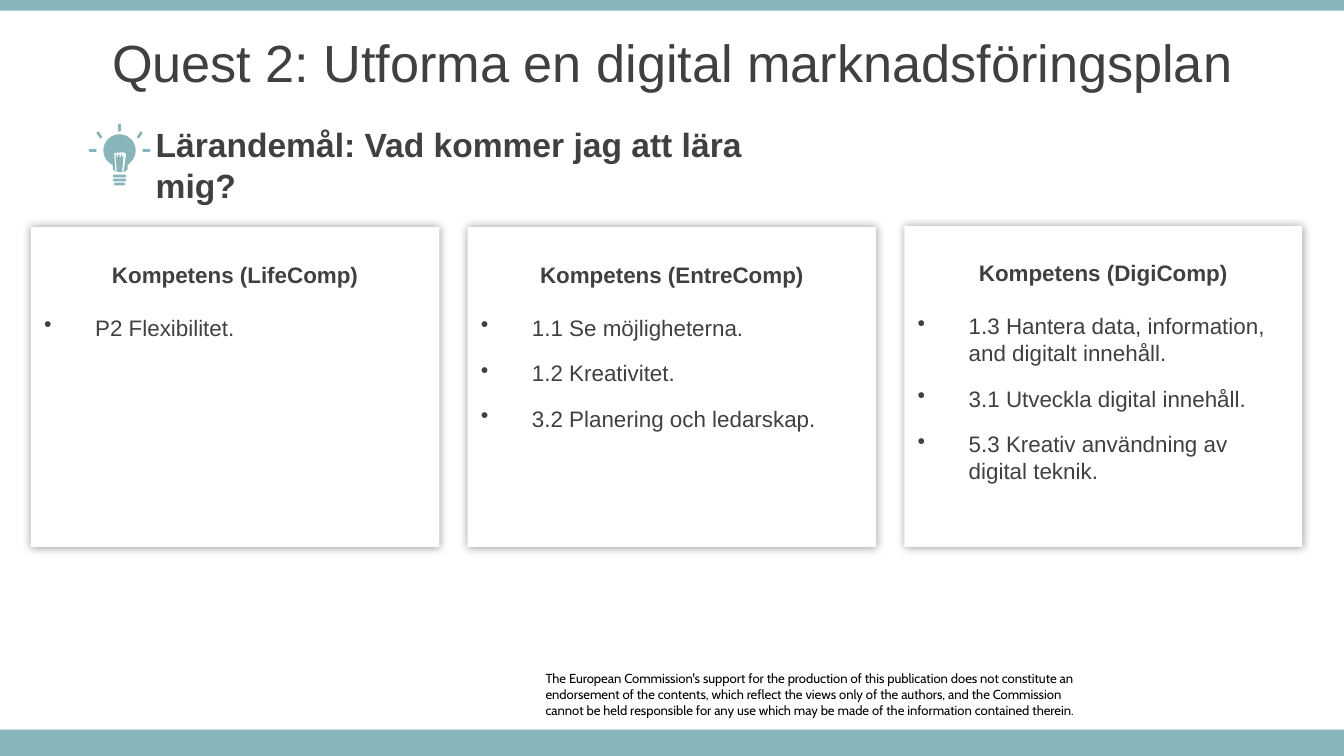
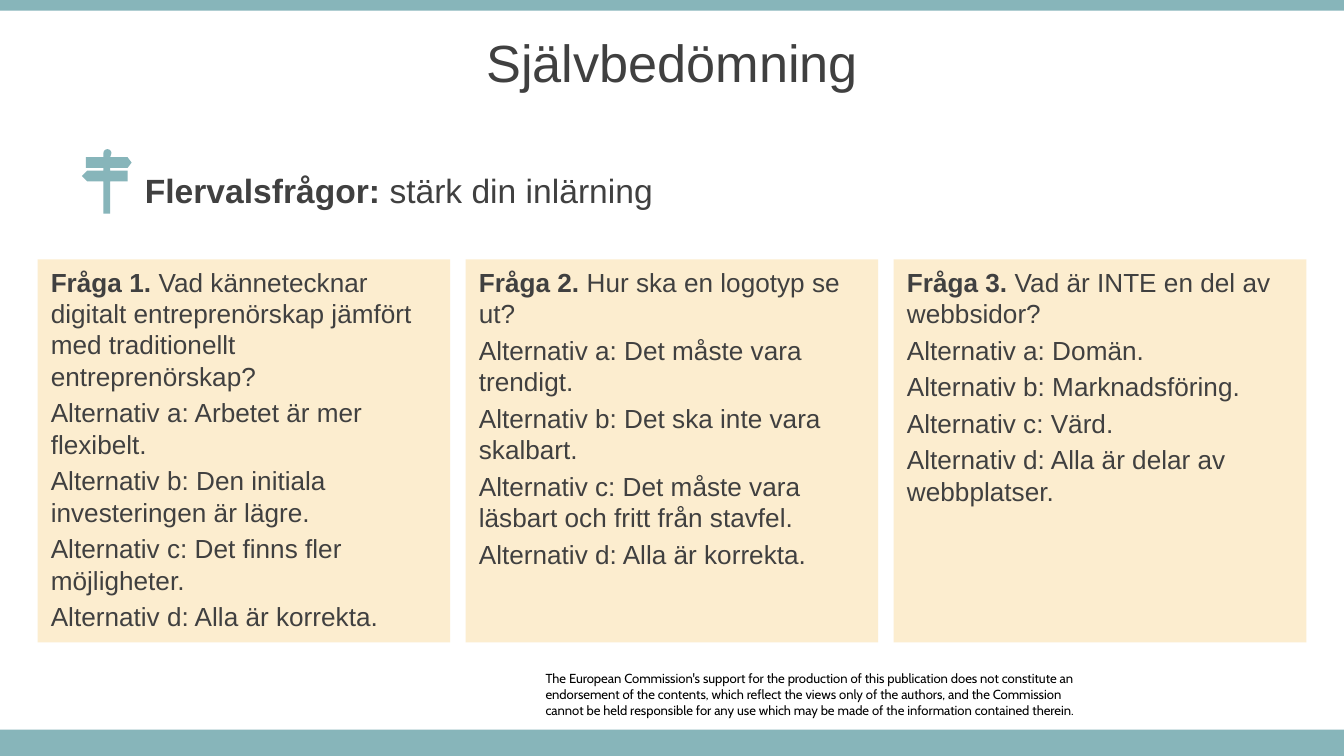
from dataclasses import dataclass
from math import atan2, cos, pi, sin

from lxml.etree import SubElement
from pptx import Presentation
from pptx.dml.color import RGBColor
from pptx.enum.shapes import MSO_SHAPE
from pptx.enum.text import MSO_ANCHOR, MSO_AUTO_SIZE, PP_ALIGN
from pptx.oxml.ns import qn
from pptx.util import Inches, Pt

COLOURS = {
    "teal": "87B5BA",
    "cream": "FCEDCF",
    "white": "FFFFFF",
    "text": "404040",
    "black": "000000",
}
DISCLAIMER = (
    "The European Commission's support for the production of this publication does not "
    "constitute an endorsement of the contents, which reflect the views only of the authors, "
    "and the Commission",
    "cannot be held responsible for any use which may be made of the information contained "
    "therein.",
)
Point = tuple[float, float]


@dataclass(frozen=True)
class Area:
    left: float
    top: float
    width: float
    height: float

    def lengths(self) -> list:
        return [Inches(side) for side in (self.left, self.top, self.width, self.height)]


@dataclass(frozen=True)
class Competence:
    area: Area
    heading: str
    goals: tuple[str, ...]


@dataclass(frozen=True)
class Question:
    label: str
    wording: str
    answers: tuple[str, ...]


COMPETENCES = (
    Competence(Area(0.23, 1.69, 3.04, 2.38), "Kompetens (LifeComp)", ("P2 Flexibilitet.",)),
    Competence(
        Area(3.48, 1.69, 3.04, 2.38),
        "Kompetens (EntreComp)",
        ("1.1 Se möjligheterna.", "1.2 Kreativitet.", "3.2 Planering och ledarskap."),
    ),
    Competence(
        Area(6.73, 1.68, 2.96, 2.39),
        "Kompetens (DigiComp)",
        (
            "1.3 Hantera data, information, and digitalt innehåll.",
            "3.1 Utveckla digital innehåll.",
            "5.3 Kreativ användning av digital teknik.",
        ),
    ),
)
QUESTIONS = (
    Question(
        "Fråga 1. ",
        "Vad kännetecknar digitalt entreprenörskap jämfört med traditionellt entreprenörskap?",
        (
            "Arbetet är mer flexibelt.",
            "Den initiala investeringen är lägre.",
            "Det finns fler möjligheter.",
            "Alla är korrekta.",
        ),
    ),
    Question(
        "Fråga 2. ",
        "Hur ska en logotyp se ut?",
        (
            "Det måste vara trendigt.",
            "Det ska inte vara skalbart.",
            "Det måste vara läsbart och fritt från stavfel.",
            "Alla är korrekta.",
        ),
    ),
    Question(
        "Fråga 3. ",
        "Vad är INTE en del av webbsidor?",
        ("Domän.", "Marknadsföring.", "Värd.", "Alla är delar av webbplatser."),
    ),
)


def paint(shape, colour: str) -> None:
    shape.shadow.inherit = False
    shape.fill.solid()
    shape.fill.fore_color.rgb = RGBColor.from_string(COLOURS[colour])
    shape.line.fill.background()


def add_rectangle(page, area: Area, colour: str):
    box = page.shapes.add_shape(MSO_SHAPE.RECTANGLE, *area.lengths())
    paint(box, colour)
    box.text_frame.word_wrap = True
    box.text_frame.vertical_anchor = MSO_ANCHOR.TOP
    return box


def add_text_box(page, area: Area, anchor=MSO_ANCHOR.MIDDLE):
    box = page.shapes.add_textbox(*area.lengths())
    box.text_frame.word_wrap = True
    box.text_frame.vertical_anchor = anchor
    return box


def write(box, text: str, *, size: float, bold_lead: str = "", bold: bool = False,
          font: str = "Arial", colour: str = "text", align=PP_ALIGN.LEFT,
          before: float = 0, after: float = 0, bullet: bool = False) -> None:
    """Add a paragraph, optionally opened by a bold lead; the first has no space before."""
    first = box.text_frame.paragraphs[0]
    fresh = not first.runs
    para = first if fresh else box.text_frame.add_paragraph()
    if bullet:
        properties = para._p.get_or_add_pPr()
        properties.set("marL", str(Inches(0.38)))
        properties.set("indent", str(-Inches(0.38)))
        SubElement(properties, qn("a:buChar")).set("char", "•")
    para.alignment = align
    para.space_before = Pt(0 if fresh else before)
    para.space_after = Pt(after)
    for words, heavy in ((bold_lead, True), (text, bold)):
        if words:
            span = para.add_run()
            span.text = words
            span.font.name = font
            span.font.size = Pt(size)
            span.font.bold = heavy
            span.font.color.rgb = RGBColor.from_string(COLOURS[colour])


def add_glow(shape) -> None:
    """Give the shape a soft, centred shadow."""
    effects = shape._element.spPr.find(qn("a:effectLst"))
    shadow = SubElement(effects, qn("a:outerShdw"), blurRad=str(Pt(5)), dist="0", dir="0",
                        algn="ctr", rotWithShape="0")
    tint = SubElement(shadow, qn("a:srgbClr"), val=COLOURS["black"])
    SubElement(tint, qn("a:alpha"), val="40000")


def arc(centre: Point, radius: float, start: float, end: float, steps: int = 8) -> list[Point]:
    angles = [start + (end - start) * step / steps for step in range(steps + 1)]
    return [(centre[0] + radius * cos(a), centre[1] + radius * sin(a)) for a in angles]


def pill(start: Point, end: Point, radius: float = 0.01) -> list[Point]:
    """Outline of a round-ended stroke between two points."""
    turn = atan2(end[1] - start[1], end[0] - start[0])
    return (arc(end, radius, turn - pi / 2, turn + pi / 2)
            + arc(start, radius, turn + pi / 2, turn + 3 * pi / 2))


def add_outline(page, contours: list[list[Point]]) -> None:
    scaled = [[(Inches(x), Inches(y)) for x, y in contour] for contour in contours]
    builder = page.shapes.build_freeform(*scaled[0][0])
    for index, contour in enumerate(scaled):
        if index:
            builder.move_to(*contour[0])
        builder.add_line_segments(contour[1:], close=True)
    paint(builder.convert_to_shape(), "teal")


def add_light_bulb(page) -> None:
    middle = 0.89
    glass = arc((middle, 1.12), 0.12, 0.75 * pi, 2.25 * pi, 32)
    glass += [(0.95, 1.23), (0.95, 1.26), (0.93, 1.28), (0.86, 1.28), (0.84, 1.26), (0.84, 1.23)]
    filament = [
        (0.85, 1.14), (0.86, 1.28), (0.87, 1.28), (0.86, 1.15), (0.87, 1.15), (0.87, 1.17),
        (0.88, 1.17), (0.88, 1.15), (0.89, 1.15), (0.89, 1.17), (0.9, 1.17), (0.9, 1.15),
        (0.91, 1.15), (0.91, 1.17), (0.92, 1.17), (0.92, 1.15), (0.91, 1.28), (0.92, 1.28),
        (0.94, 1.14), (0.92, 1.14), (0.92, 1.13), (0.91, 1.13), (0.91, 1.14), (0.9, 1.14),
        (0.9, 1.13), (0.89, 1.13), (0.89, 1.14), (0.88, 1.14), (0.88, 1.13), (0.87, 1.13),
        (0.87, 1.14),
    ]
    base = [pill((middle - half, y), (middle + half, y))
            for half, y in ((0.04, 1.31), (0.04, 1.34), (0.03, 1.37))]
    rays = [pill((middle, 0.93), (middle, 0.97))]
    for side in (-1, 1):
        rays.append(pill((middle + side * 0.18, 1.12), (middle + side * 0.22, 1.12)))
        rays.append(pill((middle + side * 0.14, 1.02), (middle + side * 0.16, 0.99)))
    add_outline(page, [glass, filament, *base, *rays])


def add_signpost(page) -> None:
    post_top = arc((0.8, 1.14), 0.03, pi, 2 * pi)
    right_sign = [(0.82, 1.17), (0.95, 1.17), (0.98, 1.21), (0.95, 1.25), (0.82, 1.25)]
    left_sign_right = [(0.82, 1.27), (0.95, 1.27), (0.95, 1.35), (0.82, 1.35)]
    foot = [(0.82, 1.59), (0.77, 1.59)]
    left_sign = [(0.77, 1.35), (0.65, 1.35), (0.61, 1.31), (0.65, 1.27), (0.77, 1.27)]
    right_sign_left = [(0.77, 1.25), (0.64, 1.25), (0.64, 1.17), (0.77, 1.17)]
    add_outline(page, [post_top + right_sign + left_sign_right + foot
                       + left_sign + right_sign_left])


def add_page(deck, title: str):
    """Add a slide with the disclaimer, both bands and the title."""
    page = deck.slides.add_slide(deck.slide_layouts[6])
    footer = add_text_box(page, Area(4.06, 4.99, 4.17, 0.35), MSO_ANCHOR.TOP)
    frame = footer.text_frame
    frame.margin_left = frame.margin_right = frame.margin_top = frame.margin_bottom = 0
    frame.auto_size = MSO_AUTO_SIZE.SHAPE_TO_FIT_TEXT
    for sentence in DISCLAIMER:
        write(footer, sentence, size=7, font="Cabin", colour="black")
    for band in (Area(0, 5.43, 10, 0.2), Area(0, 0, 10, 0.08)):
        add_rectangle(page, band, "teal")
    heading = add_text_box(page, Area(0, 0.14, 10, 0.63))
    write(heading, title, size=28, align=PP_ALIGN.CENTER)
    return page


def add_competence_card(page, competence: Competence) -> None:
    card = add_rectangle(page, competence.area, "white")
    add_glow(card)
    card.text_frame.margin_top = Inches(0.25)
    write(card, competence.heading, size=12, bold=True, align=PP_ALIGN.CENTER, after=14)
    for goal in competence.goals:
        write(card, goal, size=12, after=10, bullet=True)


def add_question_card(page, area: Area, question: Question) -> None:
    card = add_rectangle(page, area, "cream")
    write(card, question.wording, size=14, bold_lead=question.label)
    for letter, answer in zip("abcd", question.answers):
        write(card, f"Alternativ {letter}: {answer}", size=14, before=2.8)


def add_goals_page(deck) -> None:
    page = add_page(deck, "Quest 2: Utforma en digital marknadsföringsplan")
    add_light_bulb(page)
    subtitle = add_text_box(page, Area(1.06, 1.07, 4.88, 0.31))
    write(subtitle, "Lärandemål: Vad kommer jag att lära mig?", size=18, bold=True)
    for competence in COMPETENCES:
        add_competence_card(page, competence)


def add_quiz_page(deck) -> None:
    page = add_page(deck, "Självbedömning")
    subtitle = add_text_box(page, Area(0.98, 1.26, 6.69, 0.31))
    write(subtitle, "stärk din inlärning", size=18, bold_lead="Flervalsfrågor: ")
    add_signpost(page)
    first_left, last_left = 0.28, 6.65
    pitch = (last_left - first_left) / (len(QUESTIONS) - 1)
    for column, question in enumerate(QUESTIONS):
        add_question_card(page, Area(first_left + column * pitch, 1.93, 3.07, 2.85), question)


def main() -> None:
    deck = Presentation()
    deck.slide_width = Inches(10)
    deck.slide_height = Inches(10) * 9 // 16
    add_goals_page(deck)
    add_quiz_page(deck)
    deck.save("out.pptx")


if __name__ == "__main__":
    main()
